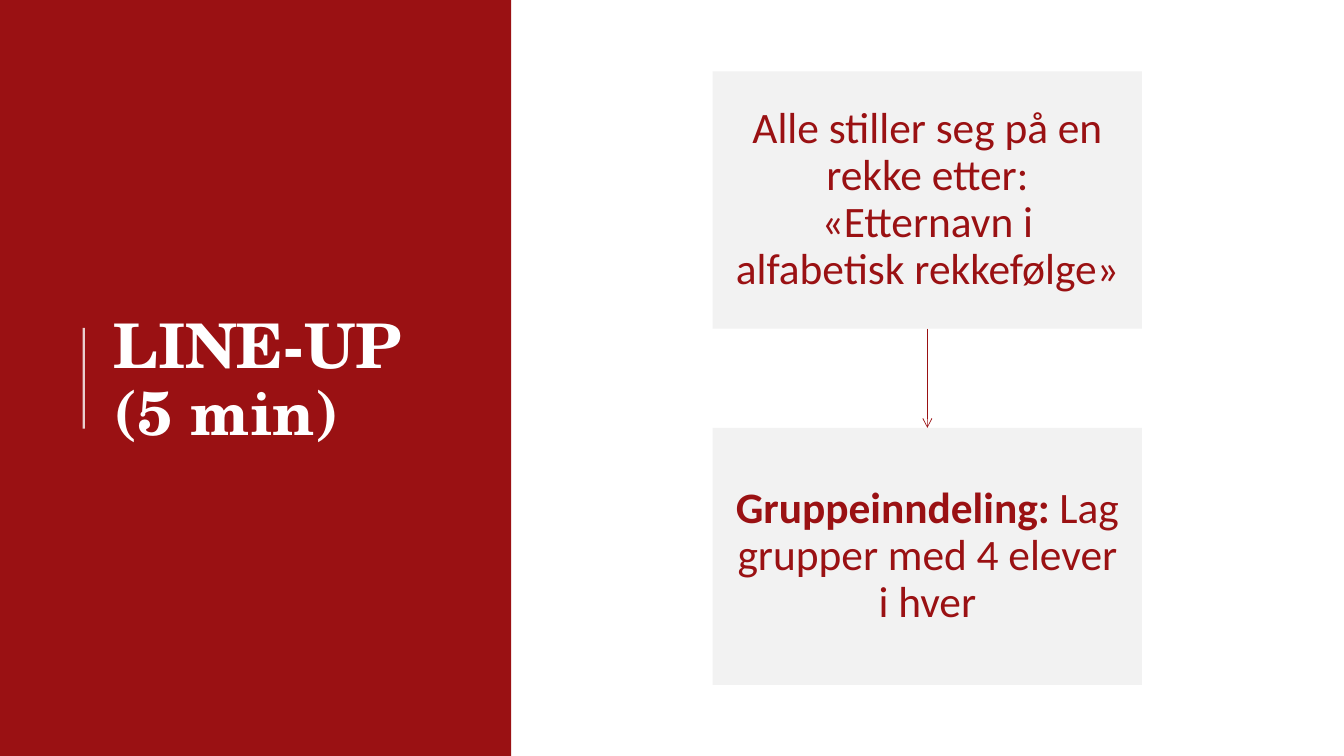
from dataclasses import dataclass

from lxml.etree import SubElement
from pptx import Presentation
from pptx.dml.color import RGBColor
from pptx.enum.shapes import MSO_CONNECTOR, MSO_SHAPE
from pptx.enum.text import MSO_ANCHOR, MSO_AUTO_SIZE, PP_ALIGN
from pptx.oxml.ns import qn
from pptx.util import Cm, Pt


@dataclass(frozen=True)
class Theme:
    red: RGBColor = RGBColor(0x9A, 0x11, 0x13)
    white: RGBColor = RGBColor(0xFF, 0xFF, 0xFF)
    grey: RGBColor = RGBColor(0xF2, 0xF2, 0xF2)
    title_font: str = "TeX Gyre Schola"
    body_font: str = "Calibri"
    title_size: int = 44
    body_size: int = 31


def write(shape, *runs, font, size, color, align, bold=False, inset=(0.25, 0.13)):
    """Fill a shape with one paragraph; each run is a text or a (text, bold) pair."""
    frame = shape.text_frame
    frame.word_wrap = True
    frame.auto_size = MSO_AUTO_SIZE.NONE
    frame.vertical_anchor = MSO_ANCHOR.MIDDLE
    frame.margin_left = frame.margin_right = Cm(inset[0])
    frame.margin_top = frame.margin_bottom = Cm(inset[1])
    paragraph = frame.paragraphs[0]
    paragraph.alignment = align
    paragraph.line_spacing = 0.9
    for item in runs:
        text, is_bold = (item, bold) if isinstance(item, str) else item
        for number, line in enumerate(text.split("\n")):
            if number:
                paragraph.add_line_break()
            run = paragraph.add_run()
            run.text = line
            run.font.name = font
            run.font.size = Pt(size)
            run.font.bold = is_bold
            run.font.color.rgb = color


class SlideBuilder:
    def __init__(self, slide, theme):
        self.slide = slide
        self.theme = theme

    def block(self, left, top, width, height, fill):
        block = self.slide.shapes.add_shape(
            MSO_SHAPE.RECTANGLE, Cm(left), Cm(top), Cm(width), Cm(height))
        block.shadow.inherit = False
        block.fill.solid()
        block.fill.fore_color.rgb = fill
        block.line.fill.background()
        return block

    def title(self, text, left, top, width, height):
        title = self.slide.shapes.title
        title.left, title.top = Cm(left), Cm(top)
        title.width, title.height = Cm(width), Cm(height)
        write(title, text, font=self.theme.title_font, size=self.theme.title_size,
              color=self.theme.white, align=PP_ALIGN.LEFT, bold=True)
        # Bring the title in front of the panel
        self.slide.shapes.element.append(title.element)

    def step(self, runs, left, top, width, height):
        step = self.block(left, top, width, height, self.theme.grey)
        write(step, *runs, font=self.theme.body_font, size=self.theme.body_size,
              color=self.theme.red, align=PP_ALIGN.CENTER, inset=(0.53, 0.56))
        return step

    def line(self, start, end, color, weight):
        line = self.slide.shapes.add_connector(
            MSO_CONNECTOR.STRAIGHT, *map(Cm, (*start, *end)))
        line.line.color.rgb = color
        line.line.width = Pt(weight)
        SubElement(line.element.spPr, qn("a:effectLst"))
        return line

    def rule(self, x, top, bottom, opacity):
        rule = self.line((x, top), (x, bottom), self.theme.white, 1.5)
        color = rule.element.spPr.find(".//" + qn("a:srgbClr"))
        SubElement(color, qn("a:alpha"), val=str(opacity * 1000))

    def arrow(self, upper, lower):
        arrow = self.line((0, 0), (0, 0), self.theme.red, 0.5)
        arrow.begin_connect(upper, 2)
        arrow.end_connect(lower, 0)
        SubElement(arrow.element.spPr.find(qn("a:ln")), qn("a:tailEnd"), type="arrow")


def main():
    presentation = Presentation()
    presentation.slide_width = Cm(33.87)
    presentation.slide_height = Cm(19.05)
    theme = Theme()
    builder = SlideBuilder(
        presentation.slides.add_slide(presentation.slide_layouts[5]), theme)

    # Title panel
    builder.block(0, 0, 12.88, 19.05, theme.red)
    builder.rule(2.11, 8.26, 10.8, opacity=80)
    builder.title("LINE-UP\n(5 min)", 2.62, 1.98, 9.37, 15.29)

    # Steps, from top to bottom
    step_texts = [
        ["Alle stiller seg på en rekke etter: «Etternavn i alfabetisk rekkefølge»"],
        [("Gruppeinndeling:", True), " Lag grupper med 4 elever i hver"],
    ]
    first_top, pitch = 1.8, 8.98
    steps = [builder.step(runs, 17.96, first_top + row * pitch, 10.82, 6.48)
             for row, runs in enumerate(step_texts)]

    # Arrows between the steps
    for upper, lower in zip(steps, steps[1:]):
        builder.arrow(upper, lower)

    presentation.save("out.pptx")


if __name__ == "__main__":
    main()
